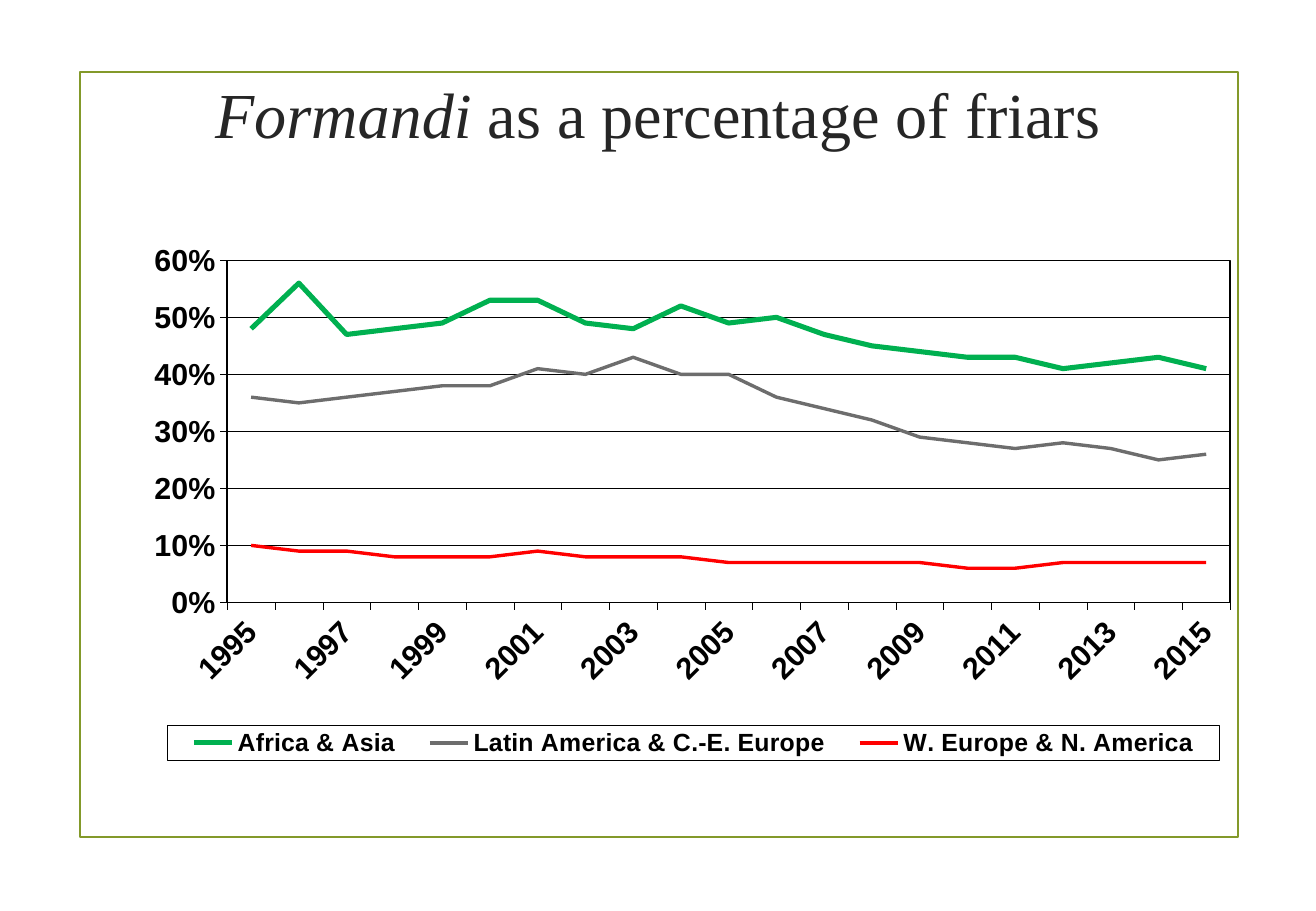
from lxml.etree import SubElement
from pptx import Presentation
from pptx.chart.data import CategoryChartData
from pptx.dml.color import RGBColor
from pptx.enum.chart import XL_CHART_TYPE as ChartType
from pptx.enum.chart import XL_LEGEND_POSITION as LegendPosition
from pptx.enum.chart import XL_TICK_MARK as TickMark
from pptx.enum.shapes import MSO_SHAPE as Shape
from pptx.enum.text import MSO_ANCHOR as Anchor
from pptx.enum.text import PP_ALIGN as Align
from pptx.oxml import parse_xml
from pptx.oxml.ns import nsdecls, qn
from pptx.util import Inches, Pt

YEARS = [str(year) for year in range(1995, 2016)]

# Name, colour, line width and percentages of each region
REGIONS = [
    ("Africa & Asia", "00B050", 3,
     [48, 56, 47, 48, 49, 53, 53, 49, 48, 52, 49, 50, 47, 45, 44, 43, 43, 41, 42, 43, 41]),
    ("Latin America & C.-E. Europe", "6D6D6D", 2,
     [36, 35, 36, 37, 38, 38, 41, 40, 43, 40, 40, 36, 34, 32, 29, 28, 27, 28, 27, 25, 26]),
    ("W. Europe & N. America", "FF0000", 2,
     [10, 9, 9, 8, 8, 8, 9, 8, 8, 8, 7, 7, 7, 7, 7, 6, 6, 7, 7, 7, 7]),
]


def color(value):
    return RGBColor.from_string(value)


def set_line(line, value, width):
    line.color.rgb = color(value)
    line.width = Pt(width)


def set_font(font, name="Arial", size=18, value="000000", bold=True, italic=False):
    font.name = name
    font.size = Pt(size)
    font.color.rgb = color(value)
    font.bold = bold
    font.italic = italic


def add_span(para, text, **style):
    span = para.add_run()
    span.text = text
    set_font(span.font, **style)


def add_frame(page):
    frame = page.shapes.add_shape(
        Shape.RECTANGLE, Inches(0.66), Inches(0.59), Inches(9.53), Inches(6.3))
    frame.shadow.inherit = False
    frame.fill.background()
    set_line(frame.line, "83992A", 1.25)
    # Send the frame behind the title
    page.shapes._spTree.insert(2, frame._element)


def fill_title(page):
    title = page.shapes.title
    title.left, title.top = Inches(0.54), Inches(0.3)
    title.width, title.height = Inches(9.75), Inches(1.25)
    title.text_frame.vertical_anchor = Anchor.MIDDLE
    para = title.text_frame.paragraphs[0]
    para.alignment = Align.CENTER
    style = dict(name="Times New Roman", size=38, value="262626", bold=False)
    add_span(para, "Formandi", italic=True, **style)
    add_span(para, " as a percentage of friars", **style)


def make_layout(x, y, w, h, inner=False):
    layout = parse_xml(f"<c:layout {nsdecls('c')}><c:manualLayout/></c:layout>")
    settings = [("layoutTarget", "inner")] if inner else []
    settings += [("xMode", "edge"), ("yMode", "edge"),
                 ("x", x), ("y", y), ("w", w), ("h", h)]
    for tag, value in settings:
        SubElement(layout[0], qn(f"c:{tag}")).set("val", str(value))
    return layout


def make_border(width):
    return parse_xml(
        f"<c:spPr {nsdecls('c', 'a')}><a:noFill/><a:ln w='{Pt(width)}'><a:solidFill>"
        "<a:srgbClr val='000000'/></a:solidFill></a:ln></c:spPr>")


def drop_layout(element):
    for layout in element.findall(qn("c:layout")):
        element.remove(layout)


def format_axis(axis):
    axis.major_tick_mark = TickMark.OUTSIDE
    axis.minor_tick_mark = TickMark.NONE
    set_line(axis.format.line, "000000", 0.25)
    set_font(axis.tick_labels.font)


def format_category_axis(axis):
    format_axis(axis)
    element = axis._element
    element.find(qn("c:txPr")).find(qn("a:bodyPr")).set("rot", "-2700000")
    # Label every second year
    element.find(qn("c:lblOffset")).addnext(
        parse_xml(f"<c:tickLblSkip {nsdecls('c')} val='2'/>"))


def format_value_axis(axis):
    format_axis(axis)
    axis.minimum_scale, axis.maximum_scale, axis.major_unit = 0, 0.6, 0.1
    axis.tick_labels.number_format = "0%"
    axis.tick_labels.number_format_is_linked = False
    axis.has_major_gridlines = True
    set_line(axis.major_gridlines.format.line, "000000", 0.25)


def format_legend(chart):
    chart.has_legend = True
    legend = chart.legend
    legend.position = LegendPosition.BOTTOM
    legend.include_in_layout = False
    set_font(legend.font, size=14.7)
    element = legend._element
    drop_layout(element)
    element.find(qn("c:legendPos")).addnext(make_layout(0.08, 0.86, 0.9, 0.06))
    element.find(qn("c:txPr")).addprevious(make_border(0.25))


def add_region_chart(page):
    data = CategoryChartData(number_format="0%")
    data.categories = YEARS
    for name, _, _, percentages in REGIONS:
        data.add_series(name, [percentage / 100 for percentage in percentages])
    chart = page.shapes.add_chart(
        ChartType.LINE, Inches(0.61), Inches(1.81), Inches(9.62), Inches(4.84), data).chart
    chart.has_title = False
    set_font(chart.font)

    # Region lines
    plot = chart.plots[0]
    plot.vary_by_categories = False
    for series, (_, value, width, _) in zip(plot.series, REGIONS):
        series.smooth = False
        set_line(series.format.line, value, width)

    # Axes, legend and bordered plot area
    format_category_axis(chart.category_axis)
    format_value_axis(chart.value_axis)
    format_legend(chart)
    area = chart._chartSpace.chart.plotArea
    drop_layout(area)
    area.insert(0, make_layout(0.131, 0.069, 0.858, 0.582, inner=True))
    area.append(make_border(1))


def main():
    deck = Presentation()
    deck.slide_width, deck.slide_height = Inches(10.83), Inches(7.5)
    page = deck.slides.add_slide(deck.slide_layouts[5])
    add_frame(page)
    fill_title(page)
    add_region_chart(page)
    deck.save("out.pptx")


if __name__ == "__main__":
    main()
